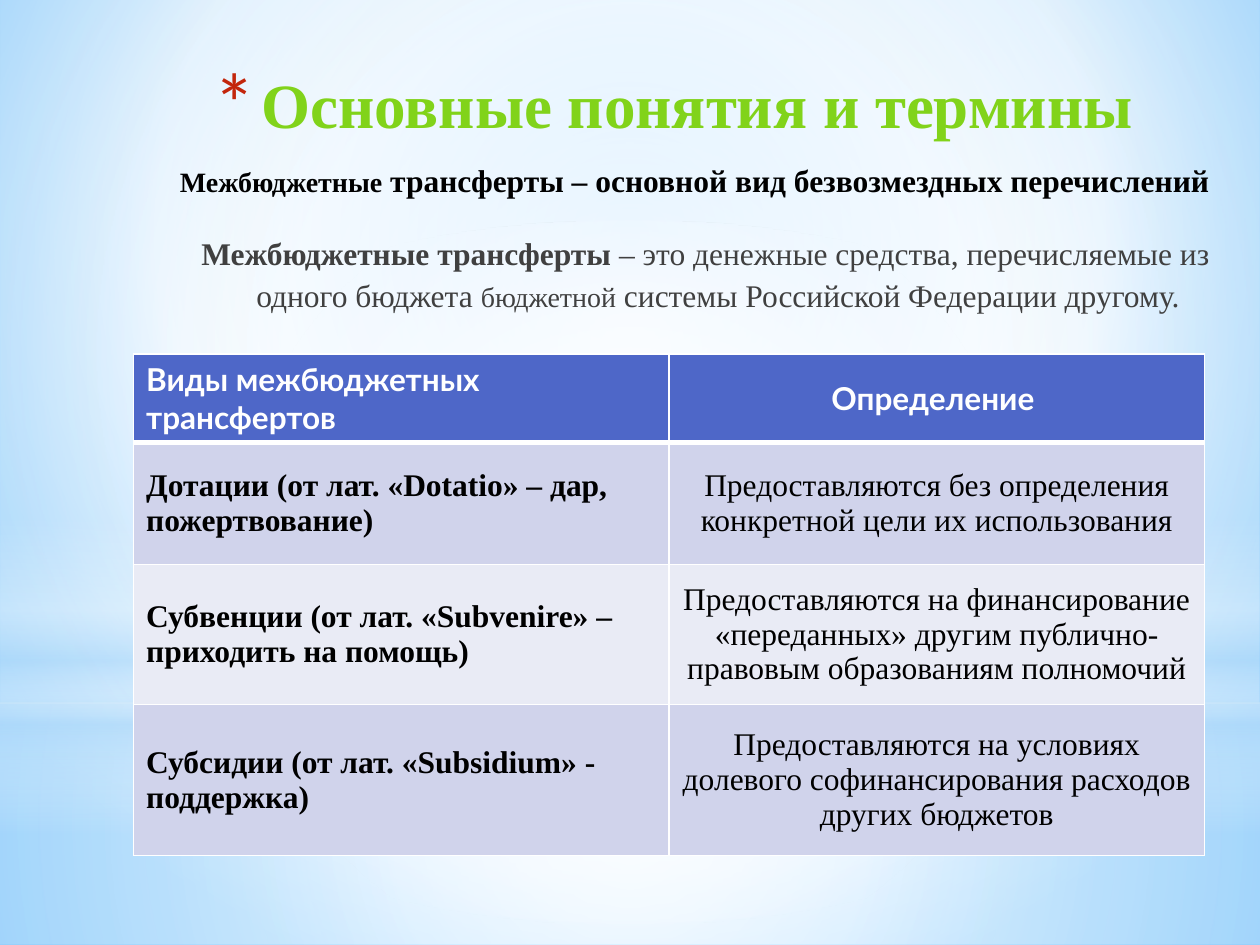
from lxml.etree import SubElement
from pptx import Presentation
from pptx.dml.color import RGBColor
from pptx.enum.shapes import MSO_SHAPE
from pptx.enum.text import MSO_ANCHOR, MSO_AUTO_SIZE, PP_ALIGN
from pptx.oxml import parse_xml
from pptx.oxml.ns import nsdecls, qn
from pptx.util import Inches, Pt

WHITE = RGBColor(0xFF, 0xFF, 0xFF)
BLACK = RGBColor(0, 0, 0)
GREEN = RGBColor(0x81, 0xD3, 0x1A)
RED = RGBColor(0xC3, 0x26, 0x0C)
GREY = RGBColor(0x40, 0x40, 0x40)
HEADER_BLUE = RGBColor(0x4E, 0x67, 0xC8)
BAND_DARK = RGBColor(0xD0, 0xD3, 0xEB)
BAND_LIGHT = RGBColor(0xE9, 0xEB, 0xF5)
SKY = RGBColor(0xB4, 0xDC, 0xFA)
SKY_INNER = RGBColor(0x9E, 0xD5, 0xFF)
SKY_OUTER = RGBColor(0x5B, 0xB9, 0xFF)

SERIF, SANS = "Times New Roman", "Lato"
CENTRE = (50, 50, 50, 50)

# Glow layers: shape, (left, top, width, height), stops (position, colour, opacity), focus
GLOWS = [
    (MSO_SHAPE.RECTANGLE, (0, 5.58, 10, 1.92),
     [(0, WHITE, 91), (37, WHITE, 76), (100, SKY, 79)], CENTRE),
    (MSO_SHAPE.RECTANGLE, (0, 0, 10, 5.58),
     [(0, WHITE, 89), (48, WHITE, 62), (100, SKY, 79)], CENTRE),
    (MSO_SHAPE.RECTANGLE, (0, 4.12, 10, 2.5),
     [(0, WHITE, 0), (29, WHITE, 30), (45, SKY, 40), (55, WHITE, 26),
      (65, SKY, 60), (100, WHITE, 0)], None),
    (MSO_SHAPE.OVAL, (0, 1.75, 10, 5.58),
     [(0, WHITE, 100), (56, WHITE, 0)], CENTRE),
]

TERMS = [
    ("Виды межбюджетных трансфертов", "Определение "),
    ("Дотации (от лат. «Dotatio» – дар, пожертвование)",
     "Предоставляются без определения конкретной цели их использования"),
    ("Субвенции (от лат. «Subvenire» – приходить на помощь)",
     "Предоставляются на финансирование «переданных» другим "
     "публично-правовым образованиям полномочий"),
    ("Субсидии (от лат. «Subsidium» - поддержка)",
     "Предоставляются на условиях долевого софинансирования расходов других бюджетов"),
]
ROW_HEIGHTS = (0.69, 0.97, 1.11, 1.2)


def set_gradient(fill, holder, stops, focus):
    """Fill with a gradient: circular around focus, or top to bottom without one."""
    fill.solid()
    solid = holder.find(qn("a:solidFill"))
    gradient = parse_xml(f'<a:gradFill {nsdecls("a")} rotWithShape="1"/>')
    stop_list = SubElement(gradient, qn("a:gsLst"))
    for position, colour, opacity in stops:
        stop = SubElement(stop_list, qn("a:gs"), pos=str(position * 1000))
        tint = SubElement(stop, qn("a:srgbClr"), val=str(colour))
        if opacity < 100:
            SubElement(tint, qn("a:alpha"), val=str(opacity * 1000))
    if focus:
        circle = SubElement(gradient, qn("a:path"), path="circle")
        SubElement(circle, qn("a:fillToRect"),
                   {side: str(share * 1000) for side, share in zip("ltrb", focus)})
    else:
        SubElement(gradient, qn("a:lin"), ang="5400000", scaled="0")
    holder.replace(solid, gradient)


def add_backdrop(slide):
    background = slide.background.fill
    background.solid()
    set_gradient(background, slide._element.find(".//" + qn("p:bgPr")),
                 [(0, SKY_INNER, 100), (60, WHITE, 100), (100, SKY_OUTER, 100)],
                 (20, 10, 20, 60))
    # Glows lie behind the placeholders
    for depth, (outline, box, stops, focus) in enumerate(GLOWS, start=2):
        glow = slide.shapes.add_shape(outline, *map(Inches, box))
        glow.shadow.inherit = False
        glow.line.fill.background()
        set_gradient(glow.fill, glow._element.spPr, stops, focus)
        slide.shapes._spTree.insert(depth, glow._element)


def place(shape, *box):
    shape.left, shape.top, shape.width, shape.height = map(Inches, box)


def write(frame, runs, colour, font=SERIF, align=PP_ALIGN.CENTER):
    """Fill the first paragraph with (text, size, bold) runs."""
    paragraph = frame.paragraphs[0]
    paragraph.alignment = align
    paragraph.font.name = font
    paragraph.font.color.rgb = colour
    for text, size, bold in runs:
        run = paragraph.add_run()
        run.text = text
        run.font.size = Pt(size)
        run.font.bold = bold
    return paragraph


def set_indent(paragraph, margin, indent):
    properties = paragraph._p.get_or_add_pPr()
    properties.set("marL", str(Inches(margin)))
    properties.set("indent", str(Inches(indent)))
    return properties


def add_title(slide):
    title = slide.shapes.title
    place(title, 0.83, 0.47, 9.06, 0.7)
    frame = title.text_frame
    frame.auto_size = MSO_AUTO_SIZE.NONE
    frame.vertical_anchor = MSO_ANCHOR.MIDDLE
    heading = write(frame, [("Основные понятия и термины", 36, True)], GREEN)
    properties = set_indent(heading, 0.35, -0.35)
    bullet = [
        parse_xml(f'<a:buClr {nsdecls("a")}><a:srgbClr val="{RED}"/></a:buClr>'),
        parse_xml(f'<a:buSzPct {nsdecls("a")} val="128000"/>'),
        parse_xml(f'<a:buFont {nsdecls("a")} typeface="{SANS}"/>'),
        parse_xml(f'<a:buChar {nsdecls("a")} char="*"/>'),
    ]
    for position, part in enumerate(bullet):
        properties.insert(position, part)


def add_intro(slide):
    intro = slide.shapes.add_textbox(*map(Inches, (1.3, 1.23, 8.43, 0.4)))
    intro.text_frame.word_wrap = True
    write(intro.text_frame, [
        ("Межбюджетные", 16, True),
        (" трансферты – основной вид безвозмездных перечислений", 18, True),
    ], BLACK)


def add_definition(slide):
    body = slide.placeholders[1]
    place(body, 1.38, 1.78, 8.39, 0.79)
    body.text_frame.auto_size = MSO_AUTO_SIZE.NONE
    definition = write(body.text_frame, [
        ("Межбюджетные трансферты ", 18, True),
        ("– это денежные средства, перечисляемые из одного бюджета ", 18, False),
        ("бюджетной", 16, False),
        (" системы Российской Федерации другому.", 18, False),
    ], GREY)
    definition.line_spacing = 1.1
    definition.space_after = Pt(3)
    properties = set_indent(definition, 0.25, -0.2)
    no_bullet = parse_xml(f'<a:buNone {nsdecls("a")}/>')
    properties.find(qn("a:spcAft")).addnext(no_bullet)


def set_borders(cell, widths):
    """White borders; widths in points for left, right, top, bottom."""
    properties = cell._tc.get_or_add_tcPr()
    for position, (side, width) in enumerate(zip("LRTB", widths)):
        properties.insert(position, parse_xml(
            f'<a:ln{side} {nsdecls("a")} w="{Pt(width)}"><a:solidFill>'
            f'<a:srgbClr val="{WHITE}"/></a:solidFill></a:ln{side}>'))


def add_terms_table(slide):
    terms = slide.shapes.add_table(
        len(TERMS), 2, Inches(1.06), Inches(2.81),
        Inches(8.5), Inches(sum(ROW_HEIGHTS))).table
    for r, (texts, height) in enumerate(zip(TERMS, ROW_HEIGHTS)):
        terms.rows[r].height = Inches(height)
        header = r == 0
        band = HEADER_BLUE if header else (BAND_LIGHT, BAND_DARK)[r % 2]
        for c, text in enumerate(texts):
            cell = terms.cell(r, c)
            cell.vertical_anchor = MSO_ANCHOR.MIDDLE
            cell.fill.solid()
            cell.fill.fore_color.rgb = band
            set_borders(cell, (1, 1, 3 if r == 1 else 1, 3 if header else 1))
            write(cell.text_frame, [(text, 18, header or c == 0)],
                  WHITE if header else BLACK, SANS if header else SERIF,
                  PP_ALIGN.CENTER if c else PP_ALIGN.LEFT)


def main():
    deck = Presentation()
    deck.slide_width, deck.slide_height = Inches(10), Inches(7.5)
    slide = deck.slides.add_slide(deck.slide_layouts[1])
    add_backdrop(slide)
    add_title(slide)
    add_definition(slide)
    add_terms_table(slide)
    add_intro(slide)
    deck.save("out.pptx")


if __name__ == "__main__":
    main()
